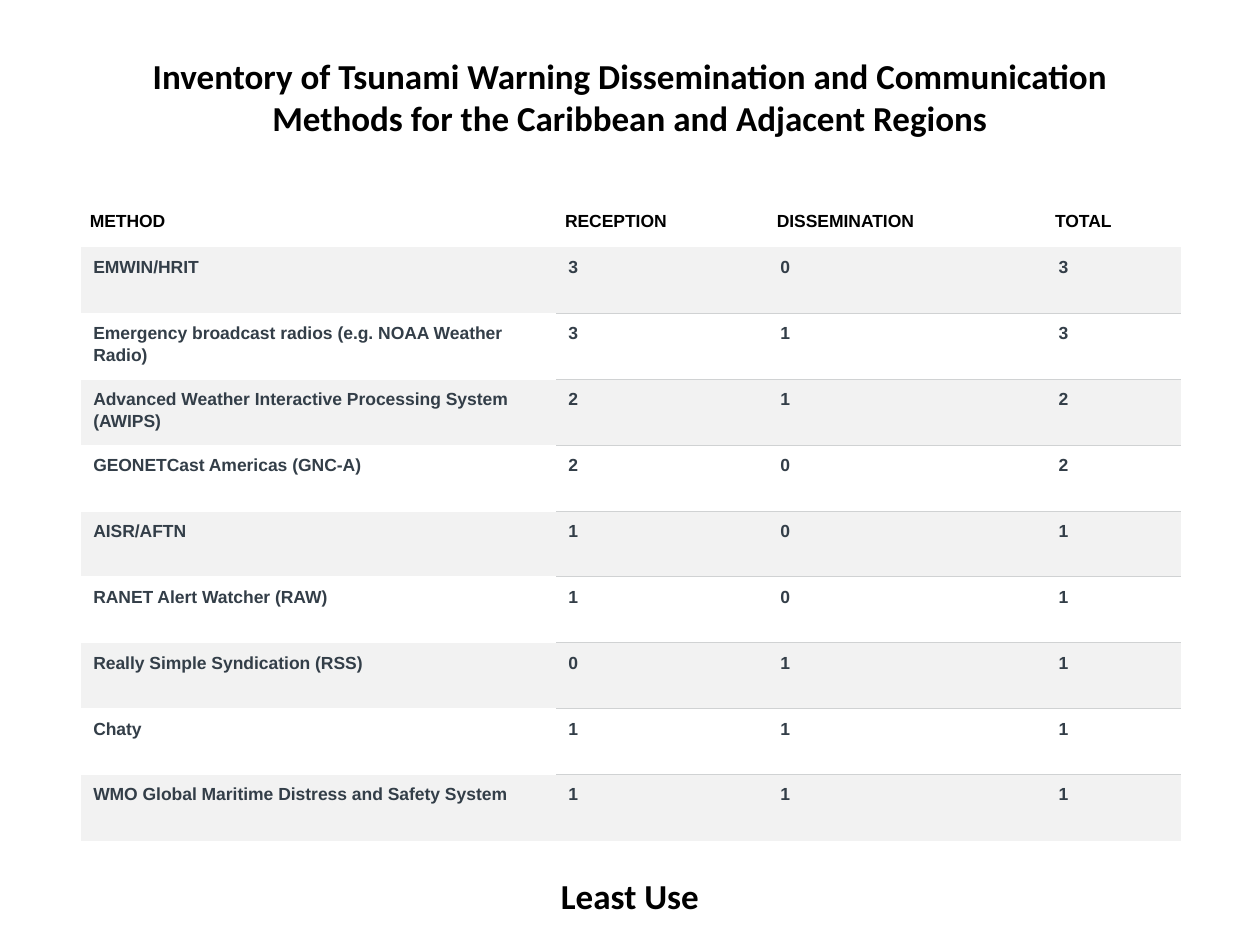
from dataclasses import dataclass

from lxml.etree import SubElement
from pptx import Presentation
from pptx.dml.color import RGBColor as RGB
from pptx.enum.text import MSO_ANCHOR as Anchor, PP_ALIGN as Align
from pptx.oxml import parse_xml
from pptx.oxml.ns import nsdecls, qn
from pptx.util import Cm, Pt


@dataclass(frozen=True)
class Theme:
    heading_font: str = "Calibri"
    table_font: str = "Arial"
    heading_size: float = 20
    table_size: float = 10
    black: str = "000000"
    slate: str = "333E48"
    white: str = "FFFFFF"
    band: str = "F2F2F2"
    rule: str = "D0D2D3"
    rule_width: float = 0.6


@dataclass(frozen=True)
class Method:
    name: str
    reception: int
    dissemination: int
    total: int


@dataclass(frozen=True)
class CellStyle:
    color: str
    margins: tuple[float, float, float, float]
    spacing: float


THEME = Theme()
HEADER = CellStyle(THEME.black, (0.18, 0.25, 0.18, 0.25), 1.0)
BODY = CellStyle(THEME.slate, (0.25, 0.15, 0.53, 0.15), 1.15)

TITLE = ("Inventory of Tsunami Warning Dissemination and Communication "
         "Methods for the Caribbean and Adjacent Regions")
FOOTING = "Least Use"
HEADERS = ("METHOD", "RECEPTION", "DISSEMINATION", "TOTAL")
METHODS = (
    Method("EMWIN/HRIT", 3, 0, 3),
    Method("Emergency broadcast radios (e.g. NOAA Weather Radio)", 3, 1, 3),
    Method("Advanced Weather Interactive Processing System (AWIPS)", 2, 1, 2),
    Method("GEONETCast Americas (GNC-A)", 2, 0, 2),
    Method("AISR/AFTN", 1, 0, 1),
    Method("RANET Alert Watcher (RAW)", 1, 0, 1),
    Method("Really Simple Syndication (RSS)", 0, 1, 1),
    Method("Chaty", 1, 1, 1),
    Method("WMO Global Maritime Distress and Safety System", 1, 1, 1),
)
COLUMN_WIDTHS = (9.58, 4.27, 5.61, 2.72)
HEADER_HEIGHT = 0.97
ROW_HEIGHT = 1.33


def format_font(p, font: str, size: float, color: str) -> None:
    for r in p.runs:
        r.font.name = font
        r.font.size = Pt(size)
        r.font.bold = True
        r.font.color.rgb = RGB.from_string(color)


def set_heading(sp, text: str, top: float) -> None:
    sp.left, sp.top, sp.width, sp.height = Cm(1.98), Cm(top), Cm(21.44), Cm(1.8)
    tf = sp.text_frame
    tf.text = text
    tf.word_wrap = True
    tf.vertical_anchor = Anchor.MIDDLE
    p = tf.paragraphs[0]
    p.alignment = Align.CENTER
    format_font(p, THEME.heading_font, THEME.heading_size, THEME.black)


def set_borders(cell, top: str | None, bottom: str | None) -> None:
    tc_pr = cell._tc.get_or_add_tcPr()
    edges = (("lnL", None), ("lnR", None), ("lnT", top), ("lnB", bottom))
    for i, (tag, color) in enumerate(edges):
        ln = parse_xml(f'<a:{tag} {nsdecls("a")} w="{Pt(THEME.rule_width)}"/>')
        if color:
            fill = SubElement(ln, qn("a:solidFill"))
            SubElement(fill, qn("a:srgbClr"), val=color)
        else:
            SubElement(ln, qn("a:noFill"))
        tc_pr.insert(i, ln)


def set_cell(cell, text: str, style: CellStyle, fill: str,
             top: str | None, bottom: str | None) -> None:
    left, above, right, below = style.margins
    cell.margin_left, cell.margin_right = Cm(left), Cm(right)
    cell.margin_top, cell.margin_bottom = Cm(above), Cm(below)
    cell.text_frame.text = text
    p = cell.text_frame.paragraphs[0]
    p.line_spacing = style.spacing
    format_font(p, THEME.table_font, THEME.table_size, style.color)
    cell.fill.solid()
    cell.fill.fore_color.rgb = RGB.from_string(fill)
    set_borders(cell, top, bottom)


def add_methods_table(s) -> None:
    count = len(METHODS)
    height = HEADER_HEIGHT + count * ROW_HEIGHT
    table = s.shapes.add_table(count + 1, len(HEADERS), Cm(1.63), Cm(4.01),
                               Cm(sum(COLUMN_WIDTHS)), Cm(height)).table
    table.first_row = False
    table.horz_banding = False
    for column, width in zip(table.columns, COLUMN_WIDTHS):
        column.width = Cm(width)
    for i, row in enumerate(table.rows):
        row.height = Cm(ROW_HEIGHT if i else HEADER_HEIGHT)
    for c, text in enumerate(HEADERS):
        set_cell(table.cell(0, c), text, HEADER, THEME.white, None, None)
    for i, m in enumerate(METHODS, start=1):
        fill = THEME.band if i % 2 else THEME.white
        for c, value in enumerate((m.name, m.reception, m.dissemination, m.total)):
            line = THEME.rule if c else THEME.white
            set_cell(table.cell(i, c), str(value), BODY, fill,
                     line if i > 1 else None, line if i < count else None)


def main() -> None:
    prs = Presentation()
    prs.slide_width, prs.slide_height = Cm(25.4), Cm(19.05)
    s = prs.slides.add_slide(prs.slide_layouts[5])
    set_heading(s.shapes.title, TITLE, 1.04)
    add_methods_table(s)
    set_heading(s.shapes.add_textbox(0, 0, 0, 0), FOOTING, 17.15)
    prs.save("out.pptx")


if __name__ == "__main__":
    main()
